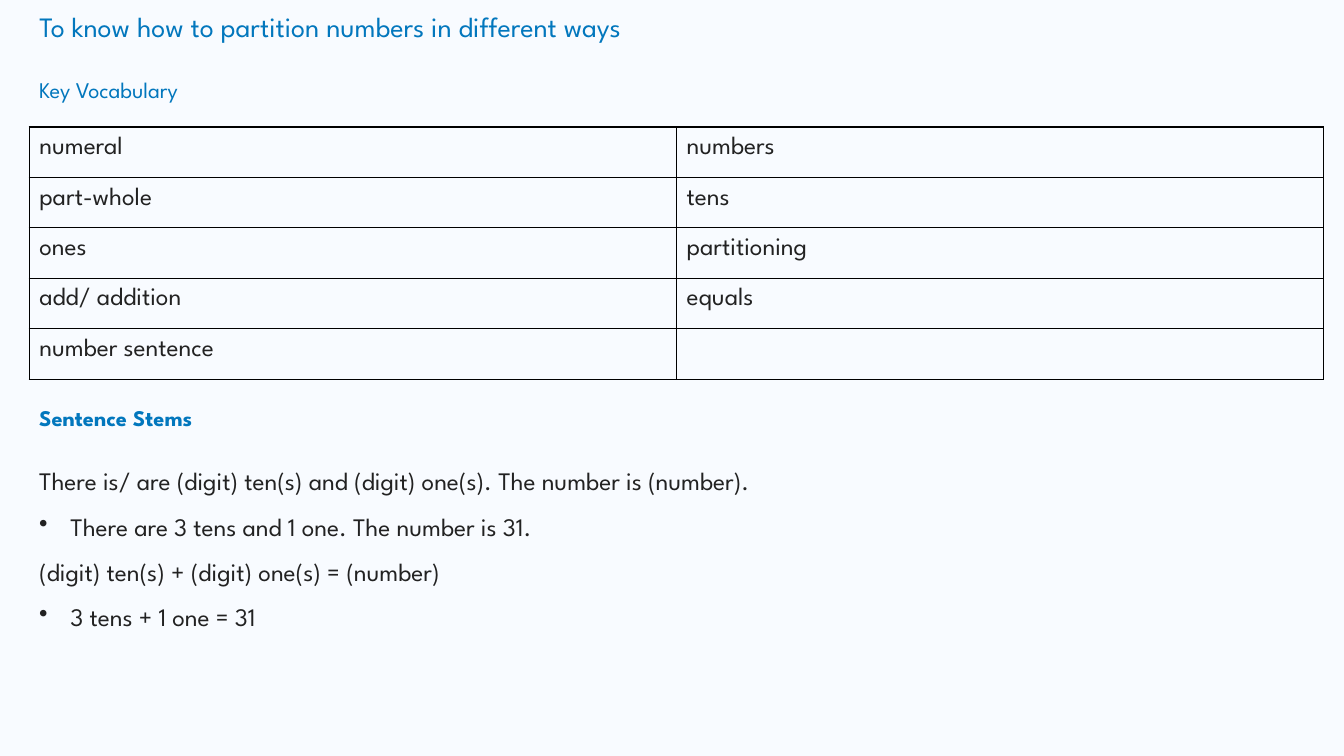
from dataclasses import dataclass

from lxml.etree import SubElement
from pptx import Presentation
from pptx.dml.color import RGBColor
from pptx.enum.text import MSO_ANCHOR, MSO_AUTO_SIZE, PP_ALIGN
from pptx.oxml import parse_xml
from pptx.oxml.ns import nsdecls, qn
from pptx.util import Inches, Pt


@dataclass(frozen=True)
class Theme:
    font: str = "League Spartan"
    back: str = "F8FBFF"
    blue: str = "0277BD"
    ink: str = "222222"
    rule: str = "000000"
    title: int = 20
    head: int = 16
    body: int = 18


class Lesson:
    def __init__(self, deck, theme):
        self.theme = theme
        self.slide = deck.slides.add_slide(deck.slide_layouts[5])
        fill = self.slide.background.fill
        fill.solid()
        fill.fore_color.rgb = RGBColor.from_string(theme.back)

    def add_text(self, para, text, size, color, bold=False):
        para.alignment = PP_ALIGN.LEFT
        run = para.add_run()
        run.text = text
        run.font.name = self.theme.font
        run.font.size = Pt(size)
        run.font.bold = bold
        run.font.color.rgb = RGBColor.from_string(color)

    def place(self, shape, box):
        shape.left, shape.top, shape.width, shape.height = map(Inches, box)
        frame = shape.text_frame
        frame.word_wrap = True
        frame.auto_size = MSO_AUTO_SIZE.NONE
        frame.vertical_anchor = MSO_ANCHOR.TOP
        return frame

    def text_box(self, box):
        return self.place(self.slide.shapes.add_textbox(*map(Inches, box)), box)

    def title(self, text, box):
        frame = self.place(self.slide.shapes.title, box)
        self.add_text(frame.paragraphs[0], text, self.theme.title, self.theme.blue)

    def heading(self, text, box, bold=False):
        para = self.text_box(box).paragraphs[0]
        self.add_text(para, text, self.theme.head, self.theme.blue, bold)

    def bullet(self, para):
        props = para._p.get_or_add_pPr()
        props.set("marL", str(Inches(0.31)))
        props.set("indent", str(-Inches(0.31)))
        color = SubElement(props, qn("a:buClr"))
        SubElement(color, qn("a:srgbClr")).set("val", self.theme.ink)
        SubElement(props, qn("a:buChar")).set("char", "•")

    def stems(self, pairs, box):
        frame = self.text_box(box)
        lines = [(text, i == 1) for pair in pairs for i, text in enumerate(pair)]
        for i, (text, dotted) in enumerate(lines):
            para = frame.add_paragraph() if i else frame.paragraphs[0]
            if dotted:
                self.bullet(para)
            para.line_spacing = 1.5
            self.add_text(para, text, self.theme.body, self.theme.ink)

    def border(self, cell):
        props = cell._tc.get_or_add_tcPr()
        for i, side in enumerate("LRTB"):
            props.insert(i, parse_xml(
                f'<a:ln{side} {nsdecls("a")} w="{Pt(1)}"><a:solidFill>'
                f'<a:srgbClr val="{self.theme.rule}"/></a:solidFill></a:ln{side}>'))

    def table(self, rows, box):
        shape = self.slide.shapes.add_table(len(rows), len(rows[0]), *map(Inches, box))
        grid = shape.table
        grid.first_row = grid.horz_banding = False
        for r, words in enumerate(rows):
            for c, word in enumerate(words):
                cell = grid.cell(r, c)
                cell.margin_left = cell.margin_right = Inches(0.1)
                cell.margin_top = cell.margin_bottom = Inches(0.1)
                cell.fill.background()
                self.border(cell)
                if word:
                    para = cell.text_frame.paragraphs[0]
                    self.add_text(para, word, self.theme.body, self.theme.ink)


def main():
    deck = Presentation()
    deck.slide_width, deck.slide_height = Inches(13.33), Inches(7.5)
    page = Lesson(deck, Theme())
    left, width = 0.29, 12.84
    page.title("To know how to partition numbers in different ways",
               (left, 0.04, 12.34, 0.44))
    page.heading("Key Vocabulary", (left, 0.71, 2.97, 0.46))
    page.heading("Sentence Stems", (left, 3.96, 2.97, 0.46), bold=True)
    page.stems([
        ("There is/ are (digit) ten(s) and (digit) one(s). The number is (number).",
         "There are 3 tens and 1 one. The number is 31."),
        ("(digit) ten(s) + (digit) one(s) = (number)", "3 tens + 1 one = 31"),
    ], (left, 4.42, width, 1.86))
    page.table([
        ("numeral", "numbers"),
        ("part-whole", "tens"),
        ("ones", "partitioning"),
        ("add/ addition", "equals"),
        ("number sentence", ""),
    ], (left, 1.26, width, 2.5))
    deck.save("out.pptx")


if __name__ == "__main__":
    main()
